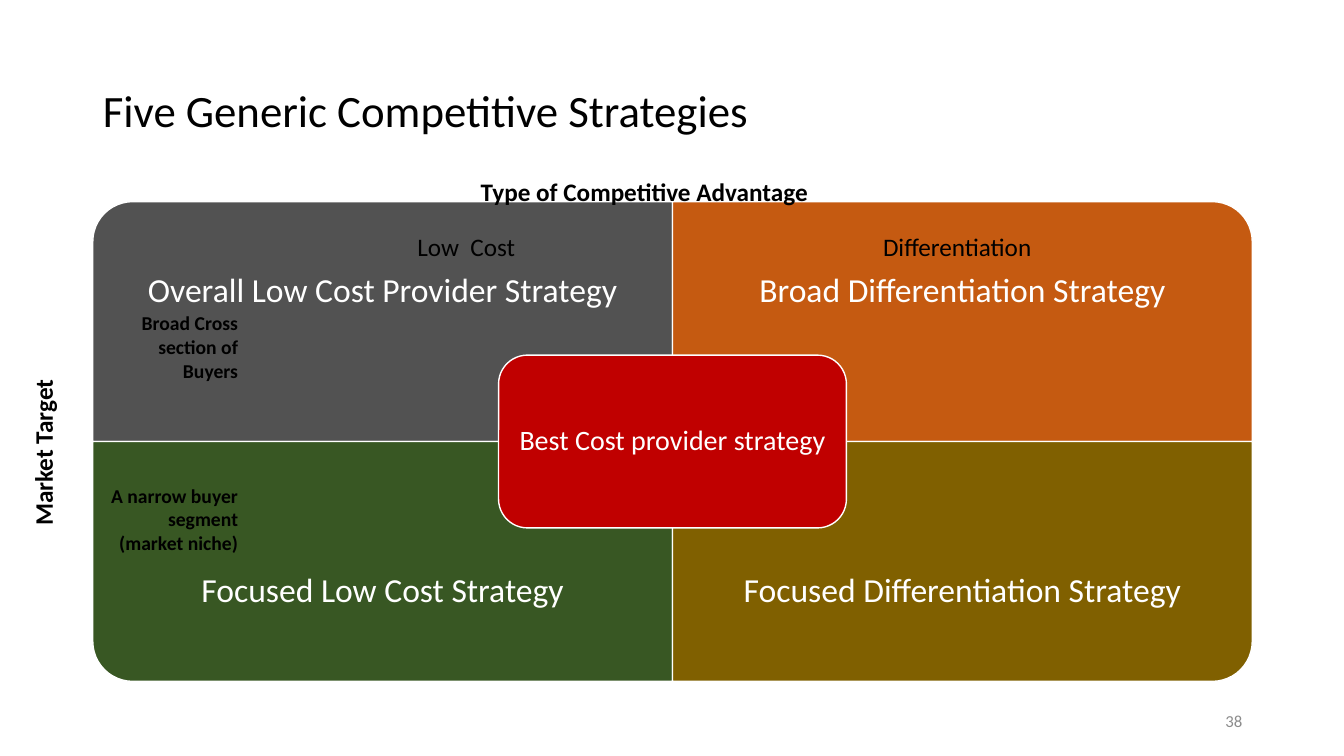
"""Build a slide with the matrix of five generic competitive strategies."""
from pptx import Presentation
from pptx.dml.color import RGBColor
from pptx.enum.shapes import MSO_SHAPE
from pptx.enum.text import MSO_ANCHOR, MSO_AUTO_SIZE, PP_ALIGN
from pptx.util import Inches, Pt

QUADRANT_SHAPE = MSO_SHAPE.ROUND_1_RECTANGLE
CENTRE_SHAPE = MSO_SHAPE.ROUNDED_RECTANGLE
LEFT, CENTRE, RIGHT = PP_ALIGN.LEFT, PP_ALIGN.CENTER, PP_ALIGN.RIGHT
TOP, MIDDLE = MSO_ANCHOR.TOP, MSO_ANCHOR.MIDDLE
GROW = MSO_AUTO_SIZE.SHAPE_TO_FIT_TEXT

BLACK = RGBColor(0x00, 0x00, 0x00)
WHITE = RGBColor(0xFF, 0xFF, 0xFF)
GREY = RGBColor(0x8C, 0x8C, 0x8C)
CHARCOAL = RGBColor(0x52, 0x52, 0x52)
ORANGE = RGBColor(0xC5, 0x5A, 0x11)
GREEN = RGBColor(0x38, 0x57, 0x23)
OLIVE = RGBColor(0x80, 0x60, 0x00)
RED = RGBColor(0xC0, 0x00, 0x00)

FONT = "Calibri"
SLIDE_W, SLIDE_H = 13.33, 7.5
GRID_LEFT, GRID_TOP = 0.92, 2
COLUMN_W, ROW_H = 5.75, 2.38
NAME_H = ROW_H * 0.75
CENTRE_W, CENTRE_H = COLUMN_W * 0.6, ROW_H * 0.72
LABEL_H = 0.4

QUADRANTS = [
    (0, 0, "Overall Low Cost Provider Strategy", CHARCOAL, 270),
    (1, 0, "Broad Differentiation Strategy", ORANGE, 0),
    (0, 1, "Focused Low Cost Strategy", GREEN, 180),
    (1, 1, "Focused Differentiation Strategy", OLIVE, 90),
]
AXIS_LABELS = [
    ("Low  Cost", 4.04, 2.25, 1.19, False, 0),
    ("Differentiation", 8.66, 2.25, 1.7, False, 0),
    ("Type of Competitive Advantage", 4.67, 1.7, 3.47, True, 0),
    ("Market Target", -0.41, 4.28, 1.67, True, 270),
]
BUYER_LABELS = [
    ("Broad Cross section of Buyers", 3.04),
    ("A narrow buyer segment (market niche)", 4.75),
]


def write(shape, text, size, color, align=LEFT, anchor=TOP, bold=False, spacing=1.0):
    """Set one paragraph of text in a shape and format it."""
    frame = shape.text_frame
    frame.text = text
    frame.word_wrap = True
    frame.vertical_anchor = anchor
    paragraph = frame.paragraphs[0]
    paragraph.alignment = align
    paragraph.line_spacing = spacing
    font = paragraph.runs[0].font
    font.name, font.size, font.bold = FONT, Pt(size), bold
    font.color.rgb = color
    return frame


def set_insets(frame, inset):
    """Give a text frame the same inset on every side."""
    frame.margin_left = frame.margin_right = Inches(inset)
    frame.margin_top = frame.margin_bottom = Inches(inset)


def add_box(slide, left, top, width, height):
    """Add an empty text box, measured in inches."""
    return slide.shapes.add_textbox(*map(Inches, (left, top, width, height)))


def add_panel(slide, kind, centre_x, centre_y, width, height, color):
    """Add a white-edged filled shape around a centre point."""
    panel = slide.shapes.add_shape(
        kind, Inches(centre_x - width / 2), Inches(centre_y - height / 2),
        Inches(width), Inches(height))
    panel.shadow.inherit = False
    panel.fill.solid()
    panel.fill.fore_color.rgb = color
    panel.line.color.rgb = WHITE
    panel.line.width = Pt(1)
    return panel


def add_quadrant(slide, column, row, strategy, color, rotation):
    """Add a quadrant with its rounded corner outward, and its strategy name."""
    left = GRID_LEFT + column * COLUMN_W
    top = GRID_TOP + row * ROW_H
    turned = rotation in (90, 270)
    width, height = (ROW_H, COLUMN_W) if turned else (COLUMN_W, ROW_H)
    panel = add_panel(slide, QUADRANT_SHAPE, left + COLUMN_W / 2,
                      top + ROW_H / 2, width, height, color)
    panel.rotation = rotation
    name = add_box(slide, left, top + row * (ROW_H - NAME_H), COLUMN_W, NAME_H)
    set_insets(write(name, strategy, 24, WHITE, CENTRE, MIDDLE, spacing=0.9), 0.19)


def add_centre(slide, strategy):
    """Add the strategy that overlaps all four quadrants."""
    panel = add_panel(slide, CENTRE_SHAPE, GRID_LEFT + COLUMN_W,
                      GRID_TOP + ROW_H, CENTRE_W, CENTRE_H, RED)
    set_insets(write(panel, strategy, 20, WHITE, CENTRE, MIDDLE, spacing=0.9), 0.08)


def add_axis_label(slide, text, left, top, width, bold, rotation):
    """Add a one-line axis label."""
    label = add_box(slide, left, top, width, LABEL_H)
    frame = write(label, text, 18, BLACK, bold=bold)
    frame.word_wrap = False
    frame.auto_size = GROW
    label.rotation = rotation


def add_buyer_label(slide, text, top):
    """Add a wrapped label for a market target."""
    label = add_box(slide, 0.89, top, 1.57, 2 * LABEL_H)
    write(label, text, 14, BLACK, RIGHT, bold=True).auto_size = GROW


def add_title(slide, text):
    """Place and format the title."""
    title = slide.shapes.title
    title.left, title.top = Inches(GRID_LEFT), Inches(0.4)
    title.width, title.height = Inches(2 * COLUMN_W), Inches(1.45)
    write(title, text, 32, BLACK, LEFT, MIDDLE, spacing=0.9)


def main():
    """Build and save the slide."""
    deck = Presentation()
    deck.slide_width, deck.slide_height = Inches(SLIDE_W), Inches(SLIDE_H)
    slide = deck.slides.add_slide(deck.slide_layouts.get_by_name("Title Only"))
    add_title(slide, "Five Generic Competitive Strategies")
    for quadrant in QUADRANTS:
        add_quadrant(slide, *quadrant)
    add_centre(slide, "Best Cost provider strategy")
    page_number = add_box(slide, 9.42, 6.95, 3, LABEL_H)
    write(page_number, "38", 12, GREY, RIGHT, MIDDLE)
    for axis_label in AXIS_LABELS:
        add_axis_label(slide, *axis_label)
    for buyer_label in BUYER_LABELS:
        add_buyer_label(slide, *buyer_label)
    deck.save("out.pptx")


if __name__ == "__main__":
    main()
